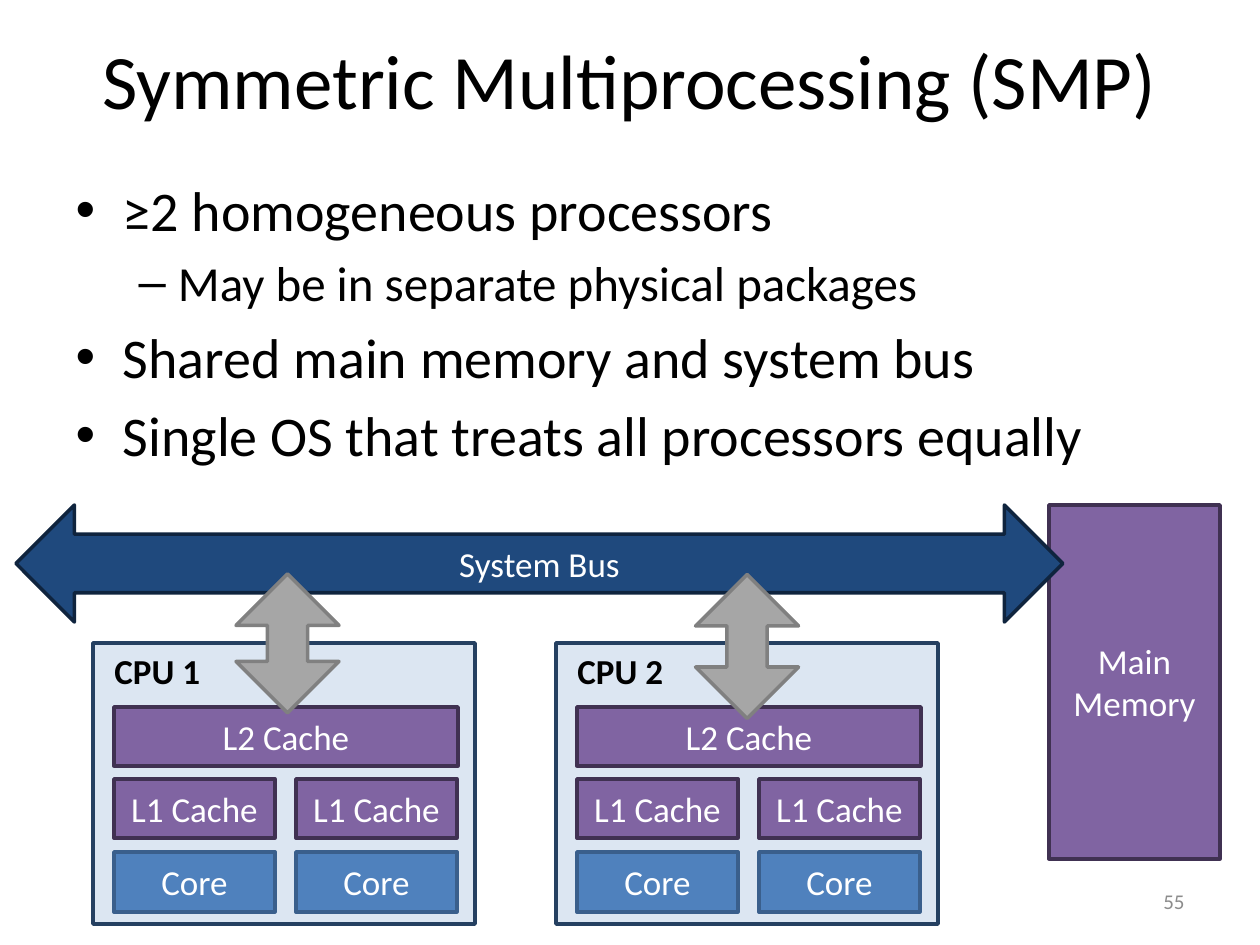
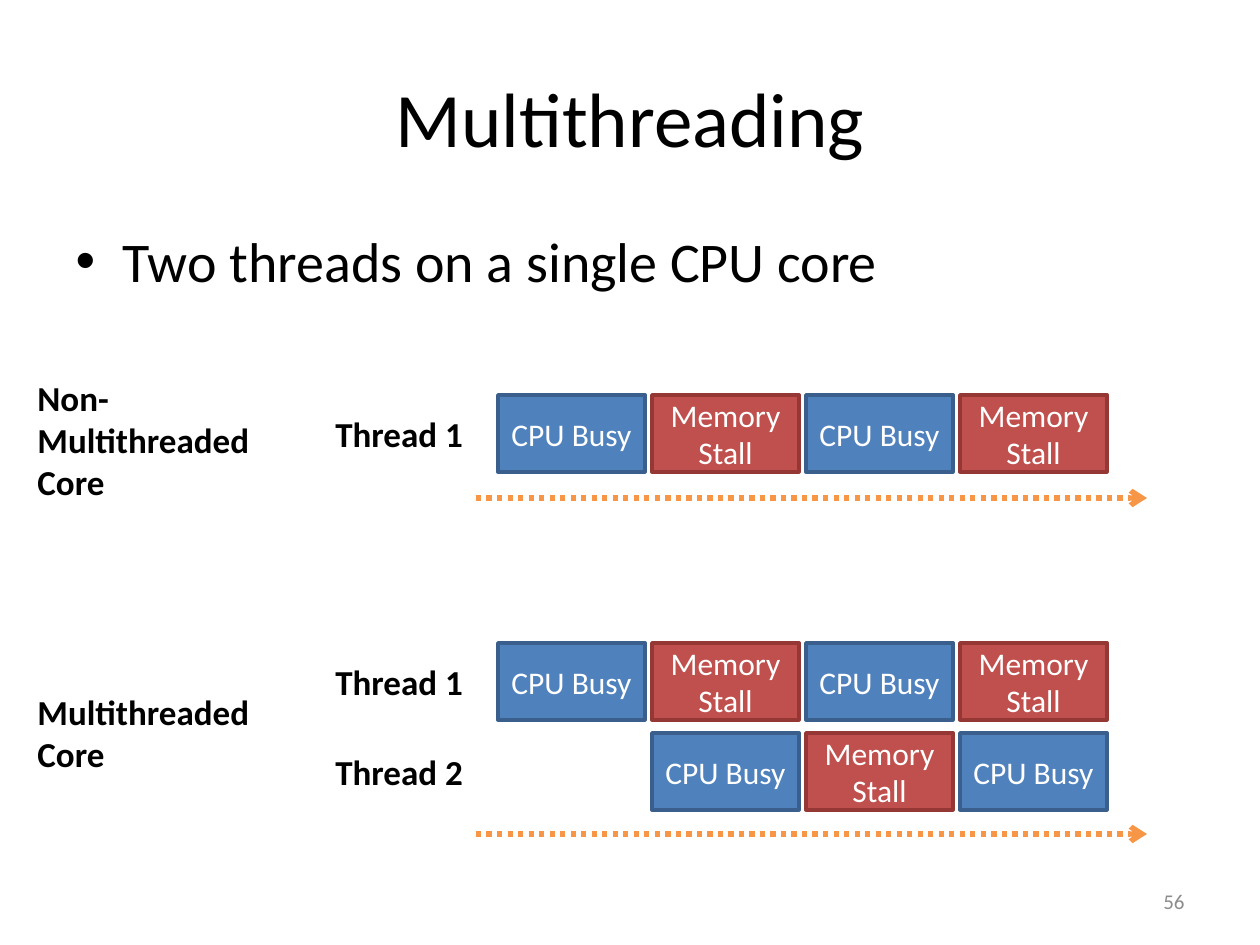
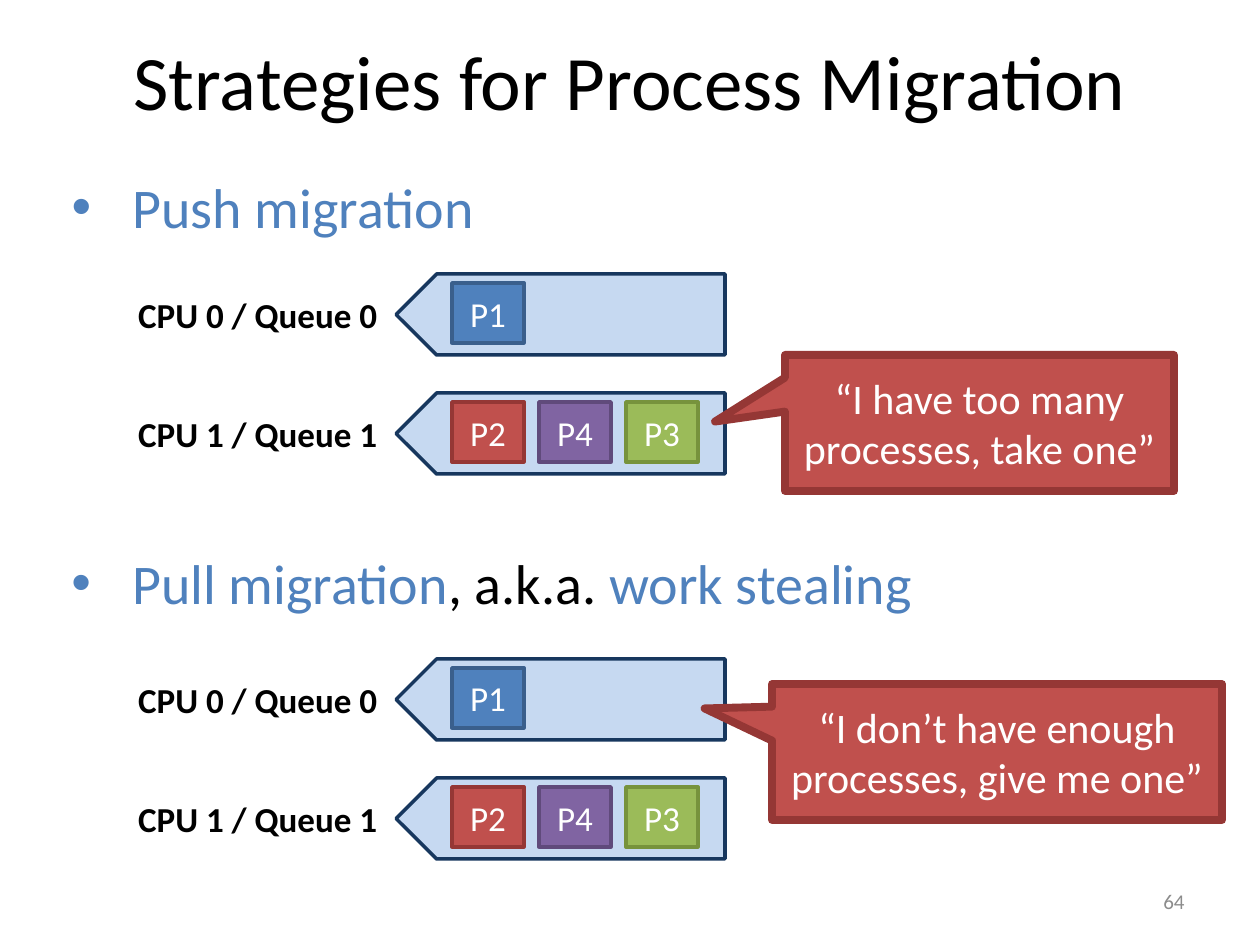
import pptx
import pptx.dml.color
import pptx.enum.dml
import pptx.enum.shapes
import pptx.enum.text
import pptx.oxml.ns
import pptx.util
import lxml.etree

FORM = pptx.enum.shapes.MSO_SHAPE
ALIGN = pptx.enum.text.PP_ALIGN
FIT = pptx.enum.text.MSO_AUTO_SIZE
FACE = "Calibri"
BLACK, WHITE, GRAY = "000000", "FFFFFF", "8C8C8C"
ACCENT, ORANGE = "4F81BD", "F79646"

# Fill and outline of each kind of part
LOOKS = {
    "blue": (ACCENT, "3A5F8C"),
    "red": ("C0504D", "953735"),
    "green": ("9BBB59", "77933C"),
    "purple": ("8064A2", "604A7B"),
    "cache": ("8064A2", "403152"),
    "bus": ("1F497D", "0F243E"),
    "chip": ("DCE6F2", "254061"),
    "link": ("A6A6A6", "808080"),
    "queue": ("C6D9F1", "17375E"),
}


def px(num):
    return pptx.util.Emu(round(num * 9144000 / 1260))


def hue(code):
    return pptx.dml.color.RGBColor.from_string(code)


def tag(parent, name, **attrs):
    return lxml.etree.SubElement(parent, pptx.oxml.ns.qn(name), attrs)


def place(shape, x, y, w, h):
    shape.left, shape.top, shape.width, shape.height = map(px, (x, y, w, h))


def style(para, size, color=BLACK, align=None, bold=None):
    font = para.font
    font.name, font.size, font.bold = FACE, pptx.util.Pt(size), bold
    font.color.rgb = hue(color)
    para.alignment = align


# Text parts
def write(slide, text, x, y, w, h, size=20, color=BLACK, align=ALIGN.LEFT,
          bold=None):
    shape = slide.shapes.add_textbox(*map(px, (x, y, w, h)))
    frame = shape.text_frame
    frame.text = text
    for para in frame.paragraphs:
        style(para, size, color, align, bold)
    return frame


def label(slide, text, x, y, w, h=55, align=ALIGN.LEFT):
    frame = write(slide, text, x, y, w, h, align=align, bold=True)
    frame.word_wrap = False
    frame.auto_size = FIT.SHAPE_TO_FIT_TEXT


def fill_list(frame, items):
    frame.word_wrap = True
    frame.auto_size = FIT.NONE
    for i, (level, text) in enumerate(items):
        para = frame.add_paragraph() if i else frame.paragraphs[0]
        para.text, para.level = text, level
        style(para, 28 if level else 32)


def strategy(frame, parts):
    """One bullet with a wide indent and runs in several colours."""
    frame.word_wrap = True
    frame.auto_size = FIT.NONE
    para = frame.paragraphs[0]
    para.space_before = pptx.util.Pt(6.4)
    style(para, 32)
    for text, color in parts:
        run = para.add_run()
        run.text = text
        run.font.color.rgb = hue(color)
    props = para._p.get_or_add_pPr()
    props.set("marL", str(px(61)))
    props.set("indent", str(-px(61)))
    font = props.find(pptx.oxml.ns.qn("a:defRPr"))
    for name, attrs in (("a:buFont", {"typeface": "Arial"}),
                        ("a:buChar", {"char": "•"})):
        font.addprevious(tag(props, name, **attrs))


# Drawn parts
def block(slide, look, x, y, w, h, text="", size=20, form=FORM.RECTANGLE,
          line=2, turn=0, adjust=()):
    shape = slide.shapes.add_shape(form, *map(px, (x, y, w, h)))
    shape.shadow.inherit = False
    fill, edge = LOOKS[look]
    shape.fill.solid()
    shape.fill.fore_color.rgb = hue(fill)
    shape.line.color.rgb = hue(edge)
    shape.line.width = pptx.util.Pt(line)
    shape.rotation = turn
    for i, value in enumerate(adjust):
        shape.adjustments[i] = value
    if text:
        frame = shape.text_frame
        frame.word_wrap = True
        frame.vertical_anchor = pptx.enum.text.MSO_ANCHOR.MIDDLE
        frame.text = text
        style(frame.paragraphs[0], size, WHITE, ALIGN.CENTER)


def time_line(slide, y):
    line = slide.shapes.add_connector(
        pptx.enum.shapes.MSO_CONNECTOR.STRAIGHT, *map(px, (476, y, 1147, y)))
    line.line.color.rgb = hue(ORANGE)
    line.line.width = pptx.util.Pt(3)
    line.line.dash_style = pptx.enum.dml.MSO_LINE.ROUND_DOT
    tag(line.line._get_or_add_ln(), "a:tailEnd", type="arrow")
    tag(line._element.spPr, "a:effectLst")


def chip(slide, name, x):
    block(slide, "chip", x, 643, 382, 281)
    label(slide, name, x + 9, 643, 111)
    block(slide, "cache", x + 21, 707, 344, 59, "L2 Cache")
    for left in (x + 21, x + 203):
        block(slide, "cache", left, 779, 161, 59, "L1 Cache")
        block(slide, "blue", left, 852, 161, 60, "Core")


def thread(slide, name, y, first, count):
    """Busy and stalled spans in turn, from the given time slot on."""
    label(slide, name, 323, y + 11, 154)
    for i in range(count):
        look, text = (("blue", "CPU Busy"), ("red", "Memory Stall"))[i % 2]
        block(slide, look, 498 + 154 * (first + i), y, 147, 77, text, 18)


def queue(slide, name, y, tasks):
    block(slide, "queue", 396, y, 329, 81, form=FORM.PENTAGON, turn=180)
    label(slide, name, 123, y + 13, 267, align=ALIGN.RIGHT)
    for i, (task, look) in enumerate(tasks):
        block(slide, look, 452 + 87 * i, y + 9, 72, 60, task)


def queues(slide, y):
    queue(slide, "CPU 0 / Queue 0", y, [("P1", "blue")])
    queue(slide, "CPU 1 / Queue 1", y + 119,
          [("P2", "red"), ("P4", "purple"), ("P3", "green")])


def callout(slide, text, x, y, w, tip):
    block(slide, "red", x, y, w, 136, text, 24,
          FORM.RECTANGULAR_CALLOUT, 4.5, adjust=tip)


# Shared slide frame: title, body place and number
def start(deck, title, top, number, body):
    slide = deck.slides.add_slide(deck.slide_layouts[1])
    head = slide.shapes.title
    place(head, 63, top, 1134, 157)
    head.text_frame.text = title
    head.text_frame.auto_size = FIT.NONE
    style(head.text_frame.paragraphs[0], 44, align=ALIGN.CENTER)
    place(slide.placeholders[1], *body)
    frame = write(slide, number, 903, 876, 294, 50, 12, GRAY, ALIGN.RIGHT)
    frame.word_wrap = True
    frame.vertical_anchor = pptx.enum.text.MSO_ANCHOR.MIDDLE
    return slide, slide.placeholders[1].text_frame


def multi(deck):
    slide, body = start(deck, "Symmetric Multiprocessing (SMP)", 0, "55",
                        (63, 169, 1134, 297))
    fill_list(body, [
        (0, "≥2 homogeneous processors"),
        (1, "May be in separate physical packages"),
        (0, "Shared main memory and system bus"),
        (0, "Single OS that treats all processors equally"),
    ])
    block(slide, "cache", 1049, 505, 171, 354, "Main Memory")
    block(slide, "bus", 16, 505, 1047, 117, "System Bus",
          form=FORM.LEFT_RIGHT_ARROW)
    chip(slide, "CPU 1", 93)
    chip(slide, "CPU 2", 556)
    for x, y, w in ((218, 592, 139), (675, 595, 144)):
        block(slide, "link", x, y, w, 103, form=FORM.LEFT_RIGHT_ARROW,
              turn=90, adjust=(0.39, 0.5))


def threads(deck):
    slide, body = start(deck, "Multithreading", 38, "56",
                        (63, 220, 1134, 101))
    fill_list(body, [(0, "Two threads on a single CPU core")])
    label(slide, "Non-\nMultithreaded\nCore", 25, 370, 248, 140)
    thread(slide, "Thread 1", 395, 0, 4)
    time_line(slide, 498)
    label(slide, "Multithreaded\nCore", 25, 684, 248, 97)
    thread(slide, "Thread 1", 643, 0, 4)
    thread(slide, "Thread 2", 733, 1, 3)
    time_line(slide, 834)


def migrate(deck):
    slide, body = start(deck, "Strategies for Process Migration", 1, "64",
                        (59, 166, 1134, 91))
    strategy(body, [("Push migration", ACCENT)])
    pull = slide.shapes.add_textbox(*map(px, (59, 542, 1134, 92)))
    strategy(pull.text_frame, [("Pull migration", ACCENT),
                               (", a.k.a. ", BLACK),
                               ("work stealing", ACCENT)])
    queues(slide, 274)
    callout(slide, "“I have too many processes, take one”",
            785, 355, 389, (-0.68, -0.01))
    queues(slide, 659)
    callout(slide, "“I don’t have enough processes, give me one”",
            772, 684, 450, (-0.65, -0.32))


def main():
    deck = pptx.Presentation()
    deck.slide_width, deck.slide_height = px(1260), px(945)
    multi(deck)
    threads(deck)
    migrate(deck)
    deck.save("out.pptx")


if __name__ == "__main__":
    main()
